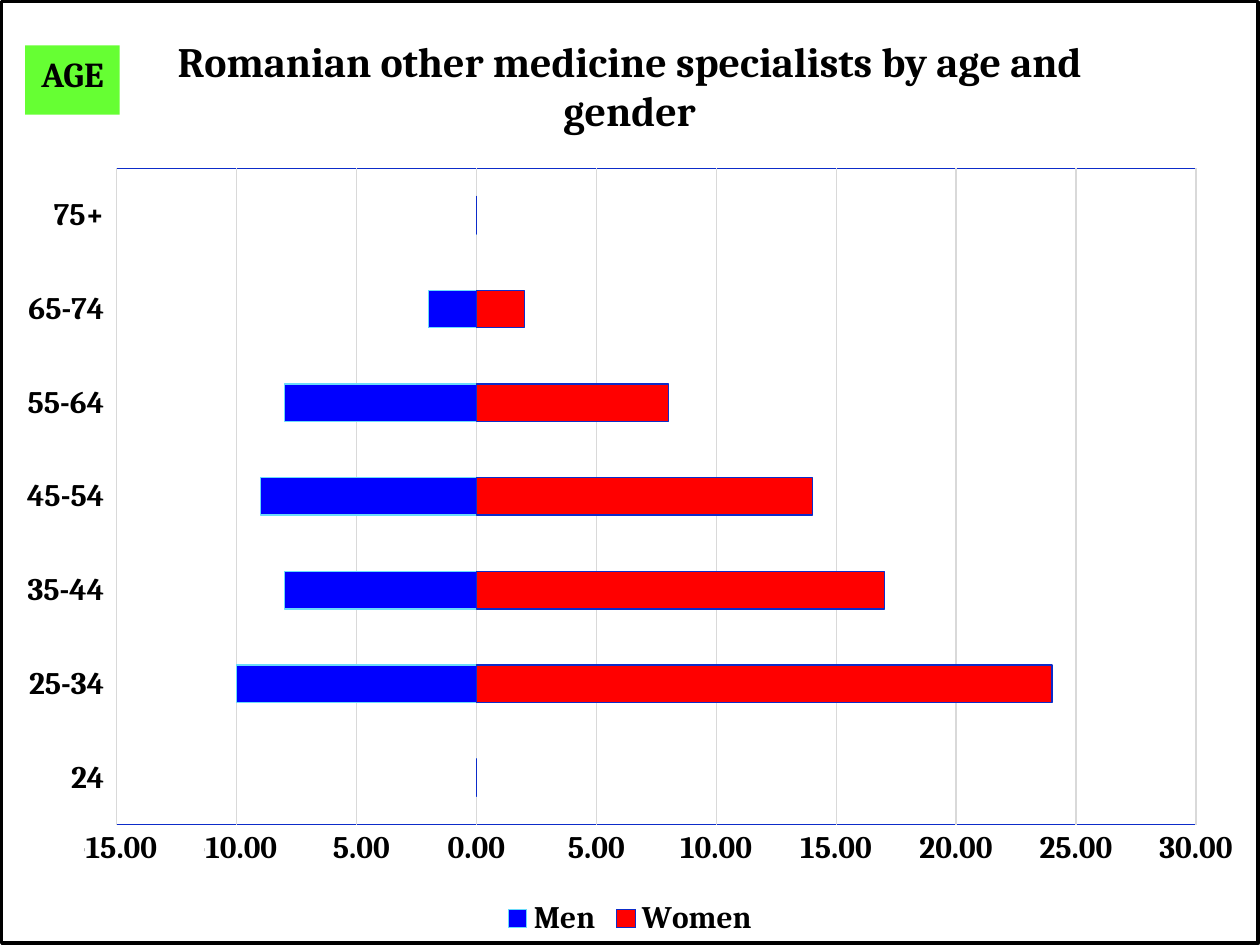
from dataclasses import dataclass

from lxml import etree
from pptx import Presentation
from pptx.chart.chart import Chart
from pptx.chart.data import CategoryChartData
from pptx.dml.color import RGBColor
from pptx.enum.chart import XL_CHART_TYPE, XL_LEGEND_POSITION, XL_TICK_LABEL_POSITION, XL_TICK_MARK
from pptx.enum.shapes import MSO_SHAPE
from pptx.enum.text import MSO_ANCHOR, PP_ALIGN
from pptx.oxml import parse_xml
from pptx.util import Inches, Pt

STACKED_BAR = XL_CHART_TYPE.BAR_STACKED
LEGEND_BOTTOM = XL_LEGEND_POSITION.BOTTOM
LABELS_LOW = XL_TICK_LABEL_POSITION.LOW
NO_TICK = XL_TICK_MARK.NONE
RECTANGLE = MSO_SHAPE.RECTANGLE
MIDDLE = MSO_ANCHOR.MIDDLE
CENTER = PP_ALIGN.CENTER

BLACK = RGBColor(0x00, 0x00, 0x00)
WHITE = RGBColor(0xFF, 0xFF, 0xFF)
GRID_GRAY = RGBColor(0xD9, 0xD9, 0xD9)
AGE_GREEN = RGBColor(0x66, 0xFF, 0x33)
MEN_BLUE = RGBColor(0x00, 0x00, 0xFF)
MEN_EDGE = RGBColor(0x6B, 0xDB, 0xFA)
WOMEN_RED = RGBColor(0xFF, 0x00, 0x00)
DEEP_BLUE = RGBColor(0x0D, 0x2C, 0xC9)

FONT = "Cambria"
WIDTH, HEIGHT = Inches(10), Inches(7.5)
CHART_NS = "http://schemas.openxmlformats.org/drawingml/2006/chart"
DRAWING_NS = "http://schemas.openxmlformats.org/drawingml/2006/main"
C = f"{{{CHART_NS}}}"

AGES = ("24", "25-34", "35-44", "45-54", "55-64", "65-74", "75+")


@dataclass(frozen=True)
class Group:
    name: str
    shares: tuple[int, ...]
    fill: RGBColor
    edge: RGBColor


@dataclass(frozen=True)
class Area:
    left: float
    top: float
    width: float
    height: float


GROUPS = (
    Group("Men", (0, -10, -8, -9, -8, -2, 0), MEN_BLUE, MEN_EDGE),
    Group("Women", (0, 24, 17, 14, 8, 2, 0), WOMEN_RED, DEEP_BLUE),
)
AGE_TAG = Area(0.2, 0.36, 0.75, 0.55)
MINUS_COVERS = tuple(Area(left, 6.66, 0.16, 0.24) for left in (0.51, 1.46, 2.48))
PLOT = {"x": 0.0915, "y": 0.177, "w": 0.859, "h": 0.697}
TITLE = {"x": 0.134, "y": 0.027}


def style_font(font, size: int) -> None:
    font.name = FONT
    font.size = Pt(size)
    font.bold = True
    font.color.rgb = BLACK


def style_line(line, color: RGBColor, width: float = 0.75) -> None:
    line.color.rgb = color
    line.width = Pt(width)


def manual_layout(shares: dict[str, float], inner: bool = False):
    layout = etree.Element(f"{C}layout")
    manual = etree.SubElement(layout, f"{C}manualLayout")
    if inner:
        etree.SubElement(manual, f"{C}layoutTarget", val="inner")
    for side in "xy":
        etree.SubElement(manual, f"{C}{side}Mode", val="edge")
    for side, share in shares.items():
        etree.SubElement(manual, f"{C}{side}", val=str(share))
    return parse_xml(etree.tostring(layout))


def frame(fill: RGBColor | None, edge: RGBColor, width: float):
    paint = f'<a:solidFill><a:srgbClr val="{fill}"/></a:solidFill>' if fill else "<a:noFill/>"
    return parse_xml(
        f'<c:spPr xmlns:c="{CHART_NS}" xmlns:a="{DRAWING_NS}">{paint}'
        f'<a:ln w="{Pt(width)}"><a:solidFill><a:srgbClr val="{edge}"/></a:solidFill></a:ln></c:spPr>'
    )


def style_axes(chart: Chart) -> None:
    ages, shares = chart.category_axis, chart.value_axis
    for axis in (ages, shares):
        axis.major_tick_mark = axis.minor_tick_mark = NO_TICK
        style_font(axis.tick_labels.font, 18)
    ages.tick_label_position = LABELS_LOW
    ages.has_major_gridlines = False
    style_line(ages.format.line, GRID_GRAY)
    shares.minimum_scale, shares.maximum_scale, shares.major_unit = -15, 30, 5
    shares.tick_labels.number_format = "0.00"
    shares.tick_labels.number_format_is_linked = False
    shares.format.line.fill.background()
    shares.has_major_gridlines = True
    style_line(shares.major_gridlines.format.line, GRID_GRAY)


def style_frames(chart: Chart) -> None:
    space = chart.element
    plot_area = space.find(f".//{C}plotArea")
    title = space.find(f".//{C}title")
    for part in (plot_area, title):
        for layout in part.findall(f"{C}layout"):
            part.remove(layout)
    plot_area.insert(0, manual_layout(PLOT, inner=True))
    plot_area.append(frame(None, DEEP_BLUE, 0.75))
    title.find(f"{C}tx").addnext(manual_layout(TITLE))
    space.find(f"{C}chart").addnext(frame(WHITE, BLACK, 2))


def add_pyramid(page) -> None:
    data = CategoryChartData(number_format="0.00")
    data.categories = AGES
    for group in GROUPS:
        data.add_series(group.name, group.shares)
    chart = page.shapes.add_chart(STACKED_BAR, 0, 0, WIDTH, HEIGHT, data).chart
    chart.font.name = FONT
    chart.font.size = Pt(10)
    chart.font.color.rgb = BLACK
    chart.has_title = True
    para = chart.chart_title.text_frame.paragraphs[0]
    para.text = "Romanian other medicine specialists by age and gender"
    style_font(para.runs[0].font, 24)
    chart.has_legend = True
    chart.legend.position = LEGEND_BOTTOM
    chart.legend.include_in_layout = False
    style_font(chart.legend.font, 18)
    plot = chart.plots[0]
    plot.gap_width, plot.overlap, plot.vary_by_categories = 150, 100, False
    for series, group in zip(plot.series, GROUPS):
        series.invert_if_negative = False
        series.format.fill.solid()
        series.format.fill.fore_color.rgb = group.fill
        style_line(series.format.line, group.edge)
    style_axes(chart)
    style_frames(chart)


def add_box(page, area: Area, fill: RGBColor):
    box = page.shapes.add_shape(
        RECTANGLE, Inches(area.left), Inches(area.top), Inches(area.width), Inches(area.height)
    )
    box.shadow.inherit = False
    box.fill.solid()
    box.fill.fore_color.rgb = fill
    box.line.fill.background()
    return box


def add_age_tag(page) -> None:
    text = add_box(page, AGE_TAG, AGE_GREEN).text_frame
    text.text = "AGE"
    text.word_wrap = False
    text.vertical_anchor = MIDDLE
    text.margin_bottom = Inches(0.15)
    para = text.paragraphs[0]
    para.alignment = CENTER
    style_font(para.runs[0].font, 20)


def main() -> None:
    deck = Presentation()
    deck.slide_width, deck.slide_height = WIDTH, HEIGHT
    page = deck.slides.add_slide(deck.slide_layouts[6])
    add_pyramid(page)
    add_age_tag(page)
    for cover in MINUS_COVERS:
        add_box(page, cover, WHITE)
    deck.save("out.pptx")


if __name__ == "__main__":
    main()
